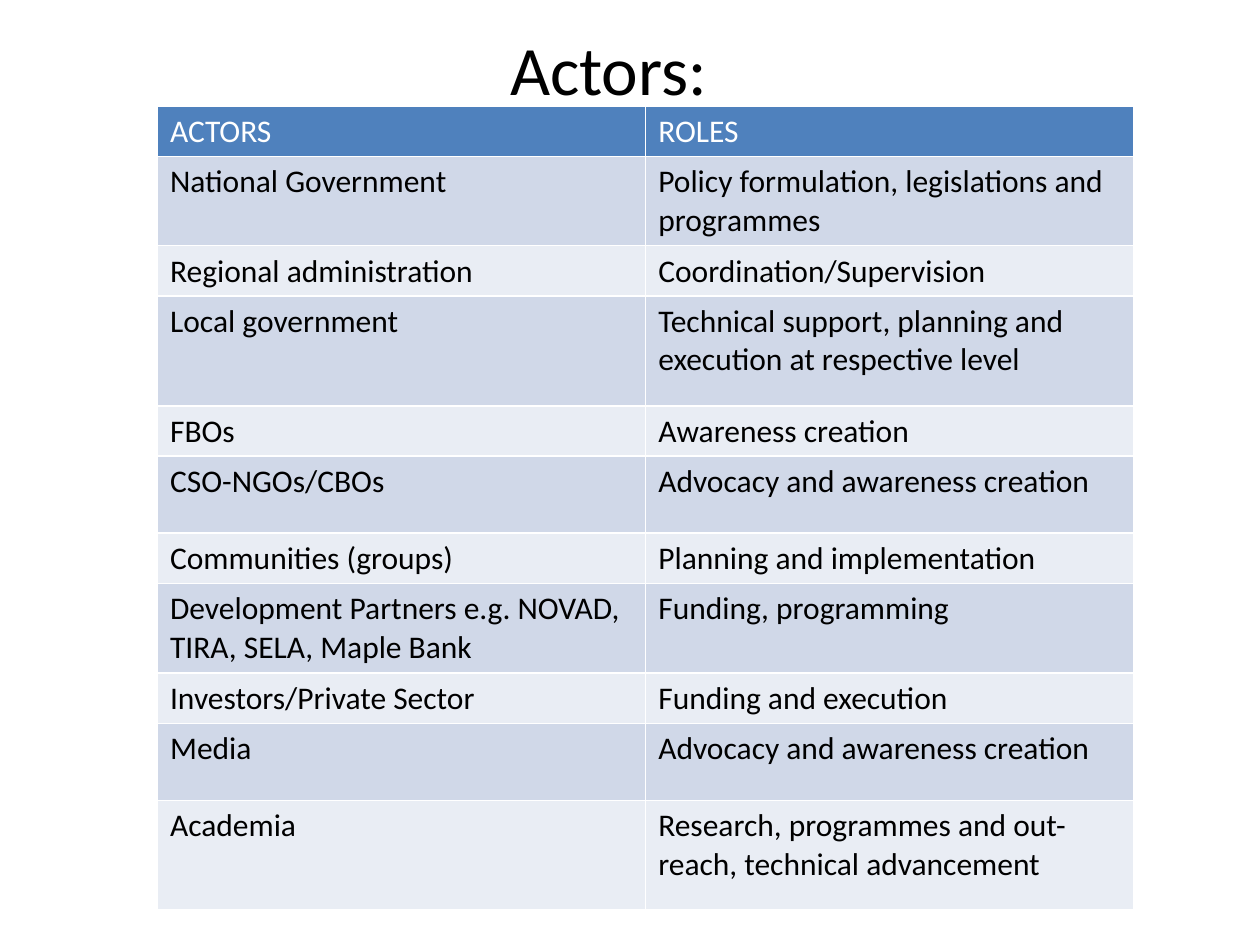
"""Build a slide with a table of actors and their roles."""
from dataclasses import dataclass

import lxml.etree
import pptx
import pptx.dml.color
import pptx.enum.text
import pptx.oxml.ns
import pptx.util

Inches = pptx.util.Inches
FONT = "Calibri"
BLACK, WHITE = "000000", "FFFFFF"
HEADER_FILL = "4F81BD"
BAND_FILLS = ("E9EDF4", "D0D8E8")
SINGLE, WRAPPED, SPACED, TALL = 0.4, 0.71, 0.61, 0.87


@dataclass(frozen=True)
class ActorRow:
    actor: str
    role: str
    height: float = SINGLE


ROWS = (
    ActorRow("ACTORS", "ROLES"),
    ActorRow("National Government", "Policy formulation, legislations and programmes", WRAPPED),
    ActorRow("Regional administration", "Coordination/Supervision"),
    ActorRow("Local government", "Technical support, planning and execution at respective level", TALL),
    ActorRow("FBOs", "Awareness creation"),
    ActorRow("CSO-NGOs/CBOs", "Advocacy and awareness creation", SPACED),
    ActorRow("Communities (groups)", "Planning and implementation"),
    ActorRow("Development Partners e.g. NOVAD, TIRA, SELA, Maple Bank", "Funding, programming", WRAPPED),
    ActorRow("Investors/Private Sector", "Funding and execution"),
    ActorRow("Media", "Advocacy and awareness creation", SPACED),
    ActorRow("Academia", "Research, programmes and out-reach, technical advancement", TALL),
)


def colour(value: str) -> pptx.dml.color.RGBColor:
    """Turn a hex string into a colour."""
    return pptx.dml.color.RGBColor.from_string(value)


def add_run(paragraph, text: str, size: float, text_colour: str) -> None:
    """Add one formatted run to a paragraph."""
    run = paragraph.add_run()
    run.text = text
    run.font.name = FONT
    run.font.size = pptx.util.Pt(size)
    run.font.bold = False
    run.font.color.rgb = colour(text_colour)


def add_title(slide, text: str) -> None:
    """Add the centred slide title."""
    box = slide.shapes.add_textbox(Inches(0.33), Inches(0.25), Inches(9), Inches(0.58))
    frame = box.text_frame
    frame.word_wrap = True
    frame.vertical_anchor = pptx.enum.text.MSO_ANCHOR.MIDDLE
    paragraph = frame.paragraphs[0]
    paragraph.alignment = pptx.enum.text.PP_ALIGN.CENTER
    add_run(paragraph, text, 39.6, BLACK)


def add_borders(cell) -> None:
    """Give a cell thin white borders."""
    properties = cell._tc.get_or_add_tcPr()
    qualified = pptx.oxml.ns.qn
    for side in "LRTB":
        line = lxml.etree.SubElement(
            properties, qualified(f"a:ln{side}"), w=str(pptx.util.Pt(1))
        )
        fill = lxml.etree.SubElement(line, qualified("a:solidFill"))
        lxml.etree.SubElement(fill, qualified("a:srgbClr"), val=WHITE)


def add_actor_table(slide, rows: tuple[ActorRow, ...]) -> None:
    """Add the table with a header and banded rows."""
    total_height = sum(row.height for row in rows)
    table = slide.shapes.add_table(
        len(rows), 2, Inches(1.25), Inches(0.84), Inches(7.75), Inches(total_height)
    ).table
    for index, row in enumerate(rows):
        is_header = index == 0
        table.rows[index].height = Inches(row.height)
        for cell, text in zip(table.rows[index].cells, (row.actor, row.role)):
            add_borders(cell)
            cell.fill.solid()
            cell.fill.fore_color.rgb = colour(HEADER_FILL if is_header else BAND_FILLS[index % 2])
            add_run(cell.text_frame.paragraphs[0], text, 18, WHITE if is_header else BLACK)


def main() -> None:
    """Create and save the presentation."""
    presentation = pptx.Presentation()
    presentation.slide_width = Inches(10)
    presentation.slide_height = Inches(7.5)
    slide = presentation.slides.add_slide(presentation.slide_layouts[6])
    add_title(slide, "Actors:")
    add_actor_table(slide, ROWS)
    presentation.save("out.pptx")


if __name__ == "__main__":
    main()
